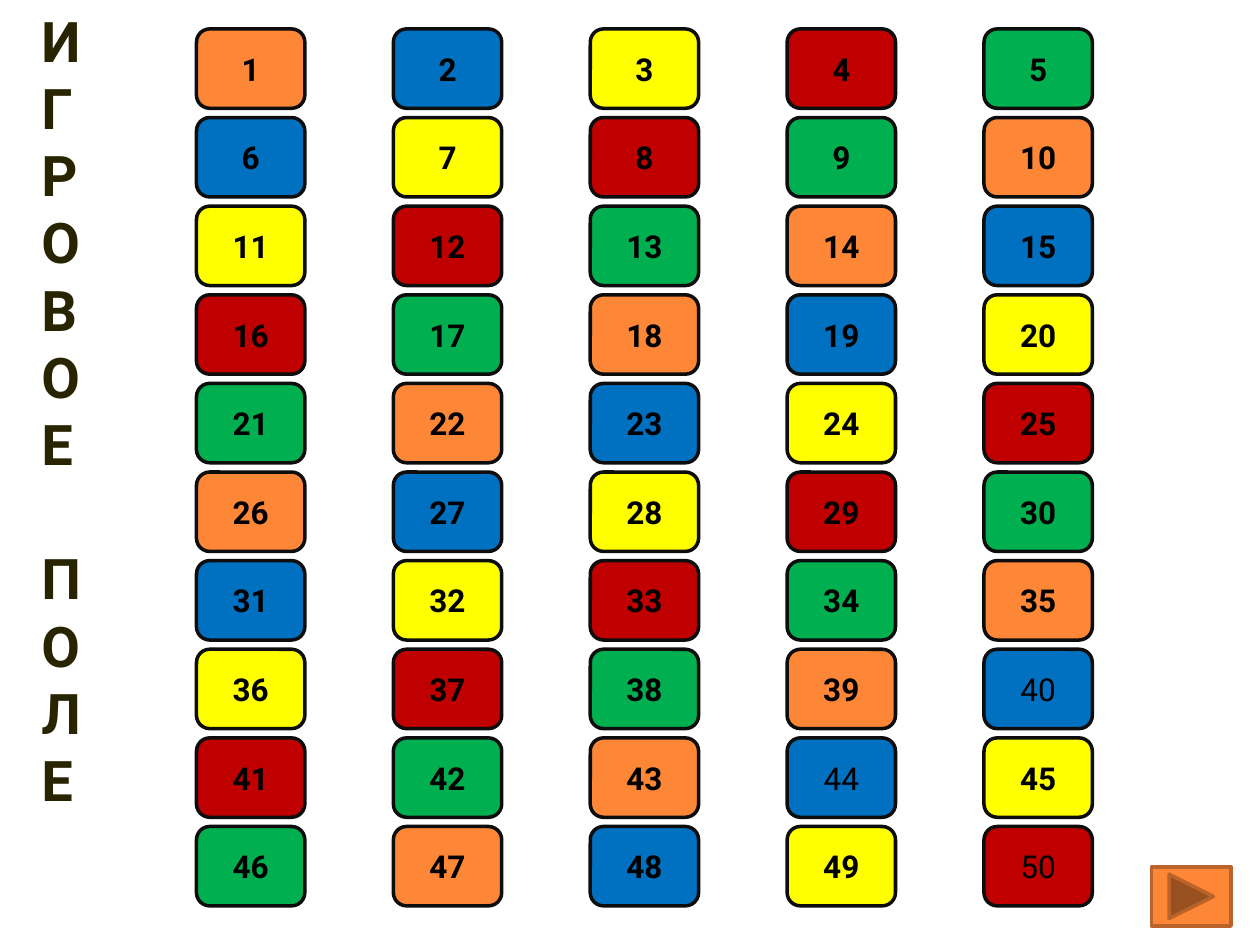
"""Build the numbered game board slide."""
from dataclasses import dataclass

from pptx import Presentation
from pptx.dml.color import RGBColor
from pptx.enum.shapes import MSO_SHAPE
from pptx.enum.text import MSO_ANCHOR, MSO_AUTO_SIZE, PP_ALIGN
from pptx.util import Inches, Pt

ROUND_RECT = MSO_SHAPE.ROUNDED_RECTANGLE
NEXT_BUTTON = MSO_SHAPE.ACTION_BUTTON_FORWARD_OR_NEXT
MIDDLE = MSO_ANCHOR.MIDDLE
CENTER = PP_ALIGN.CENTER
FIT_SHAPE = MSO_AUTO_SIZE.SHAPE_TO_FIT_TEXT


@dataclass(frozen=True)
class Theme:
    font: str = "Roboto"
    title_size: int = 32
    number_size: int = 18
    line_width: int = 2
    title: str = "292400"
    number: str = "000000"
    tile_line: str = "0D0D0D"
    button: str = "FE8637"
    button_line: str = "BC6329"
    tiles: tuple[str, ...] = ("FE8637", "0070C0", "FFFF00", "C00000", "00B050")


@dataclass(frozen=True)
class Box:
    left: float
    top: float
    width: float
    height: float

    def lengths(self) -> tuple:
        return tuple(Inches(v) for v in (self.left, self.top, self.width, self.height))


@dataclass(frozen=True)
class Tile:
    number: int
    box: Box
    fill: str
    bold: bool


THEME = Theme()
COLS, ROWS = 5, 10
FIRST_TILE = Box(1.56, 0.23, 0.86, 0.63)
COL_STEP = 6.25 / (COLS - 1)
ROW_STEP = 6.33 / (ROWS - 1)
LIGHT_NUMBERS = {40, 44, 50}


def board_tiles() -> list[Tile]:
    tiles = []
    for i in range(ROWS * COLS):
        row, col = divmod(i, COLS)
        box = Box(FIRST_TILE.left + col * COL_STEP, FIRST_TILE.top + row * ROW_STEP,
                  FIRST_TILE.width, FIRST_TILE.height)
        fill = THEME.tiles[(row + col) % len(THEME.tiles)]
        tiles.append(Tile(i + 1, box, fill, i + 1 not in LIGHT_NUMBERS))
    return tiles


def add_run(p, text: str, size: int, color: str, bold: bool) -> None:
    r = p.add_run()
    r.text = text
    r.font.name = THEME.font
    r.font.size = Pt(size)
    r.font.bold = bold
    r.font.color.rgb = RGBColor.from_string(color)


def add_filled(s, kind, box: Box, fill: str, line: str):
    sp = s.shapes.add_shape(kind, *box.lengths())
    sp.shadow.inherit = False
    sp.fill.solid()
    sp.fill.fore_color.rgb = RGBColor.from_string(fill)
    sp.line.color.rgb = RGBColor.from_string(line)
    sp.line.width = Pt(THEME.line_width)
    return sp


def add_tile(s, tile: Tile) -> None:
    sp = add_filled(s, ROUND_RECT, tile.box, tile.fill, THEME.tile_line)
    tf = sp.text_frame
    tf.vertical_anchor = MIDDLE
    p = tf.paragraphs[0]
    p.alignment = CENTER
    add_run(p, str(tile.number), THEME.number_size, THEME.number, tile.bold)


def add_title(s, text: str, box: Box) -> None:
    tf = s.shapes.add_textbox(*box.lengths()).text_frame
    tf.word_wrap = False
    tf.auto_size = FIT_SHAPE
    tf._txBody.bodyPr.set("vert", "wordArtVert")
    add_run(tf.paragraphs[0], text, THEME.title_size, THEME.title, True)


def main() -> None:
    prs = Presentation()
    prs.slide_width, prs.slide_height = Inches(10), Inches(7.5)
    s = prs.slides.add_slide(prs.slide_layouts[6])
    add_title(s, "ИГРОВОЕ ПОЛЕ", Box(0.23, 0, 0.8, 7.22))
    for tile in board_tiles():
        add_tile(s, tile)
    add_filled(s, NEXT_BUTTON, Box(9.14, 6.88, 0.63, 0.47), THEME.button, THEME.button_line)
    prs.save("out.pptx")


if __name__ == "__main__":
    main()
